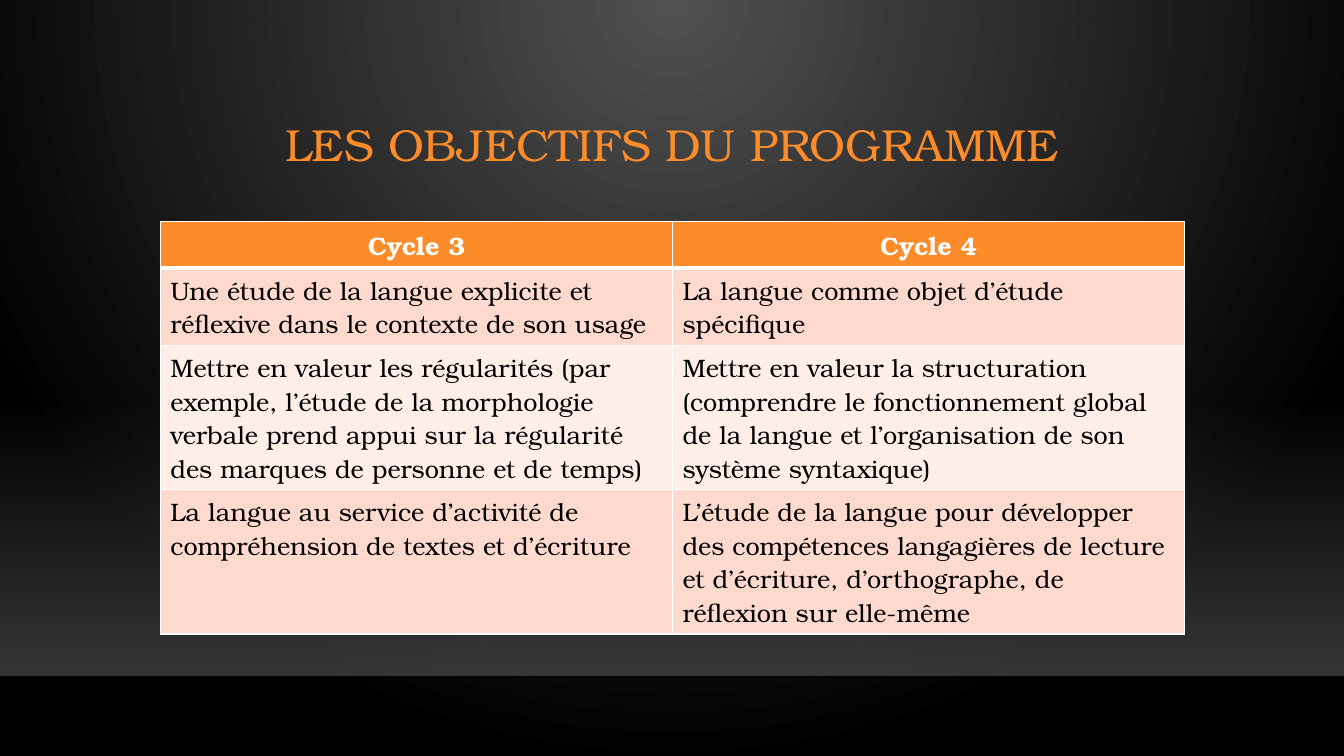
import pptx
import pptx.util
import pptx.dml.color
import pptx.enum.shapes
import pptx.enum.text
import pptx.oxml
import pptx.oxml.ns
from lxml import etree
from pptx.util import Inches

FONT = "TeX Gyre Bonum"
ORANGE = "FB8C29"
NAMESPACE = pptx.oxml.ns.nsdecls("a")
qn = pptx.oxml.ns.qn


def color(value):
    return pptx.dml.color.RGBColor.from_string(value)


def set_alpha(element, percent):
    etree.SubElement(element, qn("a:alpha"), val=str(percent * 1000))


presentation = pptx.Presentation()
presentation.slide_width = Inches(13.33)
presentation.slide_height = Inches(7.5)
slide = presentation.slides.add_slide(presentation.slide_layouts[6])

background = slide.background.fill
background.gradient()
for stop, value in zip(background.gradient_stops, ["505050", "000000"]):
    stop.color.rgb = color(value)
linear = next(slide.element.iter(qn("a:lin")))
linear.getparent().replace(linear, pptx.oxml.parse_xml(
    f'<a:path {NAMESPACE} path="circle">'
    '<a:fillToRect l="43000" t="0" r="43000" b="100000"/></a:path>'))

floor = slide.shapes.add_shape(
    pptx.enum.shapes.MSO_SHAPE.RECTANGLE, 0, Inches(3.96), Inches(13.33), Inches(2.74))
floor.shadow.inherit = False
floor.line.fill.background()
floor.fill.gradient()
floor.fill.gradient_angle = 270
for stop in floor.fill.gradient_stops:
    stop.color.rgb = color("454545")
floor_colors = list(floor.element.spPr.iter(qn("a:srgbClr")))
for element, percent in zip(floor_colors, [0, 80]):
    set_alpha(element, percent)

floor_edge = slide.shapes.add_connector(
    pptx.enum.shapes.MSO_CONNECTOR.STRAIGHT, 0, Inches(6.71), Inches(13.33), Inches(6.71))
floor_edge.line.color.rgb = color("000001")
floor_edge.line.width = pptx.util.Pt(1)
set_alpha(next(floor_edge.element.spPr.iter(qn("a:srgbClr"))), 20)
etree.SubElement(floor_edge.element.spPr, qn("a:effectLst"))

title = slide.shapes.add_textbox(Inches(1.59), Inches(0.88), Inches(10.16), Inches(1.15))
title.text_frame.word_wrap = True
title.text_frame.vertical_anchor = pptx.enum.text.MSO_ANCHOR.MIDDLE
paragraph = title.text_frame.paragraphs[0]
paragraph.text = "LES OBJECTIFS DU PROGRAMME"
paragraph.alignment = pptx.enum.text.PP_ALIGN.CENTER
paragraph.line_spacing = 0.9
paragraph.font.name = FONT
paragraph.font.size = pptx.util.Pt(32)
paragraph.font.color.rgb = color(ORANGE)

objectives = [
    ("Cycle 3", "Cycle 4"),
    ("Une étude de la langue explicite et réflexive dans le contexte de son usage",
     "La langue comme objet d’étude spécifique"),
    ("Mettre en valeur les régularités (par exemple, l’étude de la morphologie verbale "
     "prend appui sur la régularité des marques de personne et de temps)",
     "Mettre en valeur la structuration (comprendre le fonctionnement global de la langue "
     "et l’organisation de son système syntaxique)"),
    ("La langue au service d’activité de compréhension de textes et d’écriture",
     "L’étude de la langue pour développer des compétences langagières de lecture "
     "et d’écriture, d’orthographe, de réflexion sur elle-même"),
]
row_fills = [ORANGE, "FDDACD", "FEEEE8", "FDDACD"]
row_heights = [0.46, 0.77, 1.43, 1.43]

table_frame = slide.shapes.add_table(
    len(objectives), 2, Inches(1.59), Inches(2.2), Inches(10.16), Inches(sum(row_heights)))
table = table_frame.table
for row, texts, row_fill, height in zip(table.rows, objectives, row_fills, row_heights):
    row.height = Inches(height)
    is_header = texts == objectives[0]
    for cell, text in zip(row.cells, texts):
        cell.fill.solid()
        cell.fill.fore_color.rgb = color(row_fill)
        paragraph = cell.text_frame.paragraphs[0]
        paragraph.text = text
        paragraph.font.name = FONT
        paragraph.font.size = pptx.util.Pt(18)
        paragraph.font.bold = is_header
        paragraph.font.color.rgb = color("FFFFFF" if is_header else "000000")
        if is_header:
            paragraph.alignment = pptx.enum.text.PP_ALIGN.CENTER

for row_index, row_element in enumerate(table_frame.element.iter(qn("a:tr"))):
    border_widths = {
        "L": 1, "R": 1, "T": 3 if row_index == 1 else 1, "B": 3 if row_index == 0 else 1}
    for cell_properties in row_element.iter(qn("a:tcPr")):
        for position, (side, width) in enumerate(border_widths.items()):
            cell_properties.insert(position, pptx.oxml.parse_xml(
                f'<a:ln{side} {NAMESPACE} w="{pptx.util.Pt(width)}"><a:solidFill>'
                f'<a:srgbClr val="FFFFFF"/></a:solidFill></a:ln{side}>'))

presentation.save("out.pptx")
